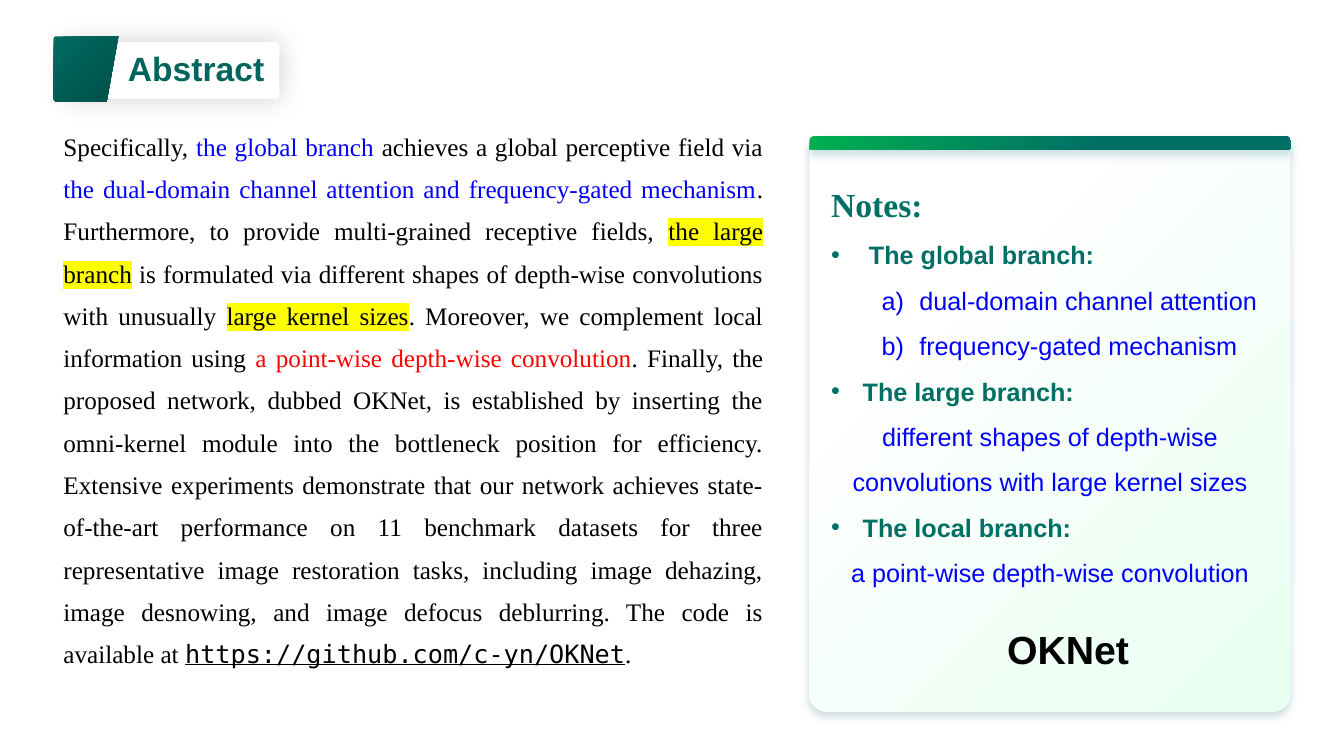
from lxml.etree import SubElement
from pptx import Presentation
from pptx.dml.color import RGBColor
from pptx.enum.shapes import MSO_SHAPE
from pptx.enum.text import PP_ALIGN
from pptx.oxml.ns import qn
from pptx.util import Pt

COLORS = {
    "white": "FFFFFF", "black": "000000", "blue": "0000FF", "red": "FF0000",
    "yellow": "FFFF00", "title": "00655C", "teal": "006F66", "green": "00B050",
    "tab_light": "006A60", "tab_dark": "005048", "mint": "E7FFF1",
    "card_shadow": "0F526C", "bar_shadow": "116584",
}
SANS, SERIF, MONO = "Arial", "Times New Roman", "DejaVu Sans Mono"


def rgb(name):
    return RGBColor.from_string(COLORS[name])


def add_color(parent, name, alpha=None):
    color = SubElement(parent, qn("a:srgbClr"), val=COLORS[name])
    if alpha is not None:
        SubElement(color, qn("a:alpha"), val=str(alpha * 1000))


def paint_gradient(sp, *stops):
    """Gradient from top left to bottom right; stops are (position, color)."""
    sp.fill.gradient()
    sp.fill.gradient_angle = 315
    for stop, (position, name) in zip(sp.fill.gradient_stops, stops):
        stop.position = position
        stop.color.rgb = rgb(name)
    sp.line.fill.background()


def add_shadow(sp, name, blur, dist, angle):
    sp.shadow.inherit = False
    effects = sp._element.spPr.find(qn("a:effectLst"))
    shadow = SubElement(effects, qn("a:outerShdw"), blurRad=str(Pt(blur)),
                        dist=str(Pt(dist)), dir=str(angle * 60000),
                        algn="ctr", rotWithShape="0")
    add_color(shadow, name, 20)


def add_panel(s, kind, box, adjustment):
    sp = s.shapes.add_shape(kind, *map(Pt, box))
    sp.adjustments[0] = adjustment
    return sp


def add_text(s, box):
    tf = s.shapes.add_textbox(*map(Pt, box)).text_frame
    tf.word_wrap = True
    return tf


def add_run(p, text, size, font, color, bold=False, underline=False, highlight=None):
    r = p.add_run()
    r.text = text
    r.font.size = Pt(size)
    r.font.bold = bold
    if underline:
        r.font.underline = True
    r.font.color.rgb = rgb(color)
    if highlight:
        add_color(SubElement(r._r.get_or_add_rPr(), qn("a:highlight")), highlight)
    r.font.name = font


def add_bullet(p, margin, hanging, numbered=False):
    pPr = p._p.get_or_add_pPr()
    pPr.set("marL", str(Pt(margin)))
    pPr.set("indent", str(-Pt(hanging)))
    if numbered:
        SubElement(pPr, qn("a:buFont"), typeface="+mj-lt")
        SubElement(pPr, qn("a:buAutoNum"), type="alphaLcParenR")
    else:
        SubElement(pPr, qn("a:buFont"), typeface=SANS)
        SubElement(pPr, qn("a:buChar"), char="•")


def add_heading(s, x, y, w, h):
    # White label plate
    plate = add_panel(s, MSO_SHAPE.ROUNDED_RECTANGLE,
                      (x + 9.4, y + 4.3, w - 9.4, 40.3), 0.057)
    plate.fill.solid()
    plate.fill.fore_color.rgb = rgb("white")
    plate.line.fill.background()
    add_shadow(plate, "black", 20, 0, 0)

    # Slanted tab with softened left corners
    outline = s.shapes.build_freeform(Pt(x + 1.8), Pt(y))
    corners = [(46.4, 0), (38, h), (1.8, h), (0.5, h - 0.8), (0, h - 2.6),
               (0, 2.2), (0.5, 0.6)]
    outline.add_line_segments([(Pt(x + dx), Pt(y + dy)) for dx, dy in corners])
    tab = outline.convert_to_shape()
    paint_gradient(tab, (0, "tab_light"), (1, "tab_dark"))
    tab.shadow.inherit = False

    tf = add_text(s, (x + 46.1, y + 5, w - 46.1, 36))
    add_run(tf.paragraphs[0], "Abstract", 24, SANS, "title", bold=True)


def add_abstract(s, x, y, w, h):
    p = add_text(s, (x, y, w, h)).paragraphs[0]
    p.alignment = PP_ALIGN.JUSTIFY
    p.line_spacing = 1.4
    marked = {"highlight": "yellow"}
    runs = [
        ("Specifically, ", "black", {}),
        ("the global branch ", "blue", {}),
        ("achieves a global perceptive field via ", "black", {}),
        ("the dual-domain channel attention and frequency-gated mechanism", "blue", {}),
        (". Furthermore, to provide multi-grained receptive fields, ", "black", {}),
        ("the large branch", "black", marked),
        (" is formulated via different shapes of depth-wise convolutions "
         "with unusually ", "black", {}),
        ("large kernel sizes", "black", marked),
        (". Moreover, we complement local information using ", "black", {}),
        ("a point-wise depth-wise convolution", "red", {}),
        (". Finally, the proposed network, dubbed OKNet, is established by inserting "
         "the omni-kernel module into the bottleneck position for efficiency. "
         "Extensive experiments demonstrate that our network achieves "
         "state-of-the-art performance on 11 benchmark datasets for three "
         "representative image restoration tasks, including image dehazing, image "
         "desnowing, and image defocus deblurring. The code is available at ",
         "black", {}),
        ("https://github.com/c-yn/OKNet", "black", {"font": MONO, "underline": True}),
        (".", "black", {}),
    ]
    for text, color, style in runs:
        add_run(p, text, 18, color=color, **{"font": SERIF, **style})


def add_notes_card(s, x, y, w, h):
    # Card body and top bar
    card = add_panel(s, MSO_SHAPE.ROUNDED_RECTANGLE, (x, y, w, h), 0.036)
    paint_gradient(card, (0.25, "white"), (1, "mint"))
    add_shadow(card, "card_shadow", 6, 4, 90)
    bar = add_panel(s, MSO_SHAPE.ROUND_2_SAME_RECTANGLE, (x, y, w, 9.7), 0.349)
    paint_gradient(bar, (0, "green"), (0.6, "teal"))
    add_shadow(bar, "bar_shadow", 6, 4, 90)

    # Notes list: text, kind, left margin, hanging indent
    tf = add_text(s, (x + 8.4, y + 16.5, w - 16.6, 309))
    p = tf.paragraphs[0]
    p.alignment = PP_ALIGN.JUSTIFY
    p.line_spacing = 1.5
    add_run(p, "Notes:", 24, SERIF, "teal", bold=True)
    notes = [
        ("The global branch:", "branch", 27, 27),
        ("dual-domain channel attention", "item", 63, 27),
        ("frequency-gated mechanism", "item", 63, 27),
        ("The large branch:", "branch", 22.5, 22.5),
        ("different shapes of depth-wise convolutions with large kernel sizes",
         "detail", 0, 0),
        ("The local branch:", "branch", 22.5, 22.5),
        ("a point-wise depth-wise convolution", "detail", 0, 0),
    ]
    for text, kind, margin, hanging in notes:
        p = tf.add_paragraph()
        p.line_spacing = 1.5
        if kind == "detail":
            p.alignment = PP_ALIGN.CENTER
        else:
            p.level = 1 if kind == "item" else 0
            add_bullet(p, margin, hanging, numbered=kind == "item")
        is_branch = kind == "branch"
        add_run(p, text, 18, SANS, "teal" if is_branch else "blue", bold=is_branch)

    # Network name
    p = add_text(s, (x + 122.4, y + 345.6, 124.6, 41)).paragraphs[0]
    p.alignment = PP_ALIGN.CENTER
    add_run(p, "OKNet", 28, SANS, "black", bold=True)


def main():
    prs = Presentation()
    prs.slide_width, prs.slide_height = Pt(960), Pt(540)
    s = prs.slides.add_slide(prs.slide_layouts[6])
    add_heading(s, 38.2, 25.9, 161.3, 46.8)
    add_abstract(s, 38.2, 81.4, 514, 401)
    add_notes_card(s, 578.2, 97.2, 343.4, 411.1)
    prs.save("out.pptx")


if __name__ == "__main__":
    main()
